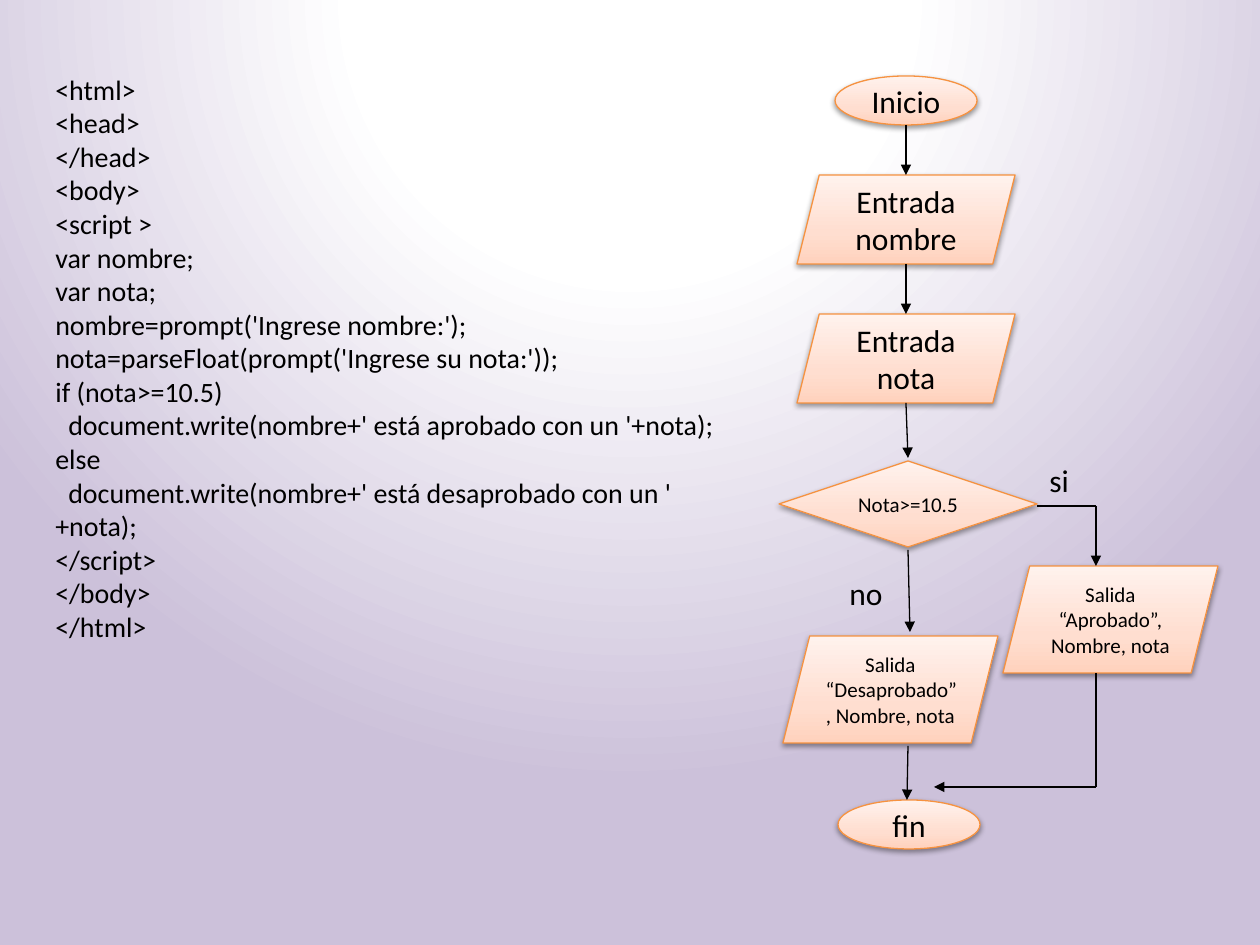
from pptx import Presentation
from pptx.dml.color import RGBColor
from pptx.enum.shapes import MSO_CONNECTOR, MSO_SHAPE
from pptx.enum.text import MSO_ANCHOR, MSO_AUTO_SIZE, PP_ALIGN
from pptx.oxml import parse_xml
from pptx.oxml.ns import nsdecls
from pptx.util import Pt
from lxml.etree import SubElement

PX = 914400 / 126
COLORS = {"text": "000000", "outline": "F69240"}
BACKGROUND = [(0, "FFFFFF"), (35, "FFFFFF"), (100, "CCC1DA")]
PEACH = [(0, "FFD2BD"), (35, "FFDED0"), (100, "FFF2ED")]


def write(tf, text, size=18, align=PP_ALIGN.LEFT, anchor=MSO_ANCHOR.TOP):
    """Fill a text frame, one paragraph a line; leading spaces become an indent."""
    tf.word_wrap = True
    tf.vertical_anchor = anchor
    for i, line in enumerate(text.split("\n")):
        p = tf.paragraphs[0] if i == 0 else tf.add_paragraph()
        p.alignment = align
        if line.startswith(" "):
            p._p.get_or_add_pPr().set("indent", str(round(13 * PX)))
        r = p.add_run()
        r.text = line.strip()
        r.font.size = Pt(size)
        r.font.name = "Calibri"
        r.font.color.rgb = RGBColor.from_string(COLORS["text"])


def set_gradient(fill, parent, stops, direction):
    """Swap the solid fill of parent for a gradient."""
    fill.solid()
    gs = "".join(f'<a:gs pos="{pos * 1000}"><a:srgbClr val="{color}"/></a:gs>'
                 for pos, color in stops)
    solid = parent.find(".//{*}solidFill")
    solid.getparent().replace(solid, parse_xml(
        f'<a:gradFill {nsdecls("a")} rotWithShape="1"><a:gsLst>{gs}</a:gsLst>'
        f'{direction}</a:gradFill>'))


prs = Presentation()
prs.slide_width, prs.slide_height = round(1260 * PX), round(945 * PX)
s = prs.slides.add_slide(prs.slide_layouts[6])
set_gradient(s.background.fill, s._element, BACKGROUND,
             '<a:path path="circle"><a:fillToRect l="50000" t="-80000" '
             'r="50000" b="180000"/></a:path>')

CODE = """<html>
<head>
</head>
<body>
<script >
var nombre;
var nota;
nombre=prompt('Ingrese nombre:');
nota=parseFloat(prompt('Ingrese su nota:'));
if (nota>=10.5)
  document.write(nombre+' está aprobado con un '+nota);
else
  document.write(nombre+' está desaprobado con un ' +nota);
</script>
</body>
</html>"""

labels = [
    (CODE, 16, 43, 66, 694, 590),
    ("si", 18, 1037, 455, 49, 50),
    ("no", 18, 837, 568, 64, 50),
]
for text, size, *box in labels:
    tf = s.shapes.add_textbox(*[round(v * PX) for v in box]).text_frame
    write(tf, text, size=size)
    tf.auto_size = MSO_AUTO_SIZE.SHAPE_TO_FIT_TEXT

OVAL, DATA, TEST = MSO_SHAPE.OVAL, MSO_SHAPE.PARALLELOGRAM, MSO_SHAPE.DIAMOND
steps = [
    (OVAL, "Inicio", 18, 835, 76, 142, 49),
    (DATA, "Entrada\nnombre", 18, 797, 175, 218, 89),
    (DATA, "Entrada\nnota", 18, 797, 314, 218, 89),
    (TEST, "Nota>=10.5", 12, 779, 461, 258, 86),
    (DATA, "Salida\n“Aprobado”, Nombre, nota", 12, 1003, 566, 215, 107),
    (DATA, "Salida\n“Desaprobado”, Nombre, nota", 12, 783, 636, 215, 107),
    (OVAL, "fin", 18, 838, 800, 142, 49),
]
for kind, text, size, *box in steps:
    sp = s.shapes.add_shape(kind, *[round(v * PX) for v in box])
    set_gradient(sp.fill, sp._element.spPr, PEACH, '<a:lin ang="16200000" scaled="0"/>')
    sp.line.color.rgb = RGBColor.from_string(COLORS["outline"])
    sp.line.width = Pt(0.75)
    sp.shadow.inherit = False
    sp._element.spPr.find("{*}effectLst").append(parse_xml(
        f'<a:outerShdw {nsdecls("a")} blurRad="40000" dist="20000" dir="5400000" '
        'rotWithShape="0"><a:srgbClr val="000000"><a:alpha val="38000"/></a:srgbClr>'
        '</a:outerShdw>'))
    write(sp.text_frame, text, size=size, align=PP_ALIGN.CENTER, anchor=MSO_ANCHOR.MIDDLE)

arrows = [
    (906, 125, 906, 175),
    (906, 264, 906, 314),
    (906, 403, 908, 458),
    (908, 550, 910, 632),
    (908, 746, 907, 800),
    (1096, 506, 1096, 566),
    (1096, 787, 934, 787),
]
plain_lines = [(1037, 506, 1096, 506), (1096, 673, 1096, 787)]
for ends in arrows + plain_lines:
    c = s.shapes.add_connector(MSO_CONNECTOR.STRAIGHT, *[round(v * PX) for v in ends])
    c.line.color.rgb = RGBColor.from_string(COLORS["text"])
    c.line.width = Pt(0.75)
    spPr = c._element.spPr
    ns = nsdecls("a").split('"')[1]
    if ends in arrows:
        SubElement(spPr.find("{*}ln"), f"{{{ns}}}tailEnd", type="triangle")
    SubElement(spPr, f"{{{ns}}}effectLst")

prs.save("out.pptx")
